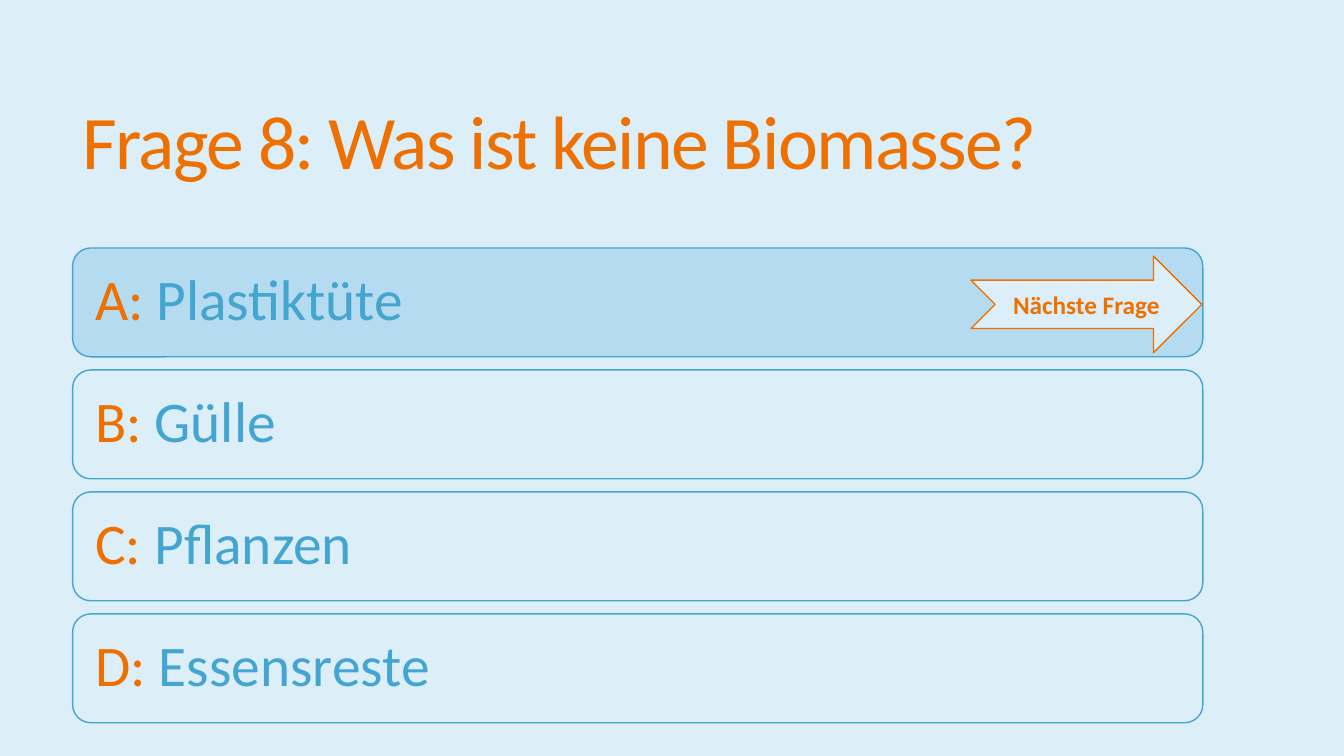
from dataclasses import dataclass

from pptx import Presentation
from pptx import util as u
from pptx.dml.color import RGBColor
from pptx.enum import shapes, text

PX = u.Inches(1) // 100


@dataclass(frozen=True)
class Theme:
    font: str = "Calibri"
    pale: str = "DCEEF8"
    highlight: str = "B5DBF0"
    blue: str = "44A5D0"
    orange: str = "ED7000"
    title_size: int = 54
    answer_size: int = 41
    button_size: int = 18


THEME = Theme()
QUESTION = "Frage 8: Was ist keine Biomasse?"
ANSWERS = [("A: ", "Plastiktüte"), ("B: ", "Gülle"),
           ("C: ", "Pflanzen"), ("D: ", "Essensreste")]
CORRECT = 0


def color(value):
    return RGBColor.from_string(value)


def add_span(para, words, size, fill, bold=False, spacing=None):
    span = para.add_run()
    span.text = words
    span.font.name = THEME.font
    span.font.size = u.Pt(size)
    span.font.bold = bold
    span.font.color.rgb = color(fill)
    if spacing is not None:
        span.font._element.set("spc", str(spacing))


def format_para(frame, align, line_spacing=1.0):
    frame.word_wrap = True
    frame.auto_size = text.MSO_AUTO_SIZE.NONE
    frame.vertical_anchor = text.MSO_ANCHOR.MIDDLE
    para = frame.paragraphs[0]
    para.alignment = align
    para.line_spacing = line_spacing
    return para


def add_panel(page, kind, left, top, width, height, fill, line):
    panel = page.shapes.add_shape(
        kind, *(length * PX for length in (left, top, width, height)))
    panel.shadow.inherit = False
    panel.fill.solid()
    panel.fill.fore_color.rgb = color(fill)
    panel.line.color.rgb = color(line)
    panel.line.width = u.Pt(1)
    return panel


# Question in the title placeholder
def place_question(page, left, top, width, height):
    title = page.shapes.title
    title.left, title.top = left * PX, top * PX
    title.width, title.height = width * PX, height * PX
    para = format_para(title.text_frame, text.PP_ALIGN.LEFT, 0.85)
    add_span(para, QUESTION, THEME.title_size, THEME.orange, spacing=-120)


# Stack of answer panels, the correct one highlighted
def place_answers(page, left, top, width, height, gap):
    panel_height = (height - gap * (len(ANSWERS) - 1)) // len(ANSWERS)
    for index, (letter, answer) in enumerate(ANSWERS):
        fill = THEME.highlight if index == CORRECT else THEME.pale
        panel = add_panel(page, shapes.MSO_SHAPE.ROUNDED_RECTANGLE,
                          left, top + index * (panel_height + gap),
                          width, panel_height, fill, THEME.blue)
        frame = panel.text_frame
        frame.margin_left = frame.margin_right = 17 * PX
        para = format_para(frame, text.PP_ALIGN.LEFT, 0.9)
        add_span(para, letter, THEME.answer_size, THEME.orange)
        add_span(para, answer, THEME.answer_size, THEME.blue)


# Arrow to the next question
def place_next_arrow(page, left, top, width, height):
    arrow = add_panel(page, shapes.MSO_SHAPE.NOTCHED_RIGHT_ARROW,
                      left, top, width, height, THEME.pale, THEME.orange)
    para = format_para(arrow.text_frame, text.PP_ALIGN.CENTER)
    add_span(para, "Nächste Frage", THEME.button_size, THEME.orange, bold=True)


def main():
    deck = Presentation()
    deck.slide_width, deck.slide_height = 1333 * PX, 750 * PX
    page = deck.slides.add_slide(deck.slide_layouts.get_by_name("Title Only"))
    page.background.fill.solid()
    page.background.fill.fore_color.rgb = color(THEME.pale)
    place_question(page, 72, 55, 1245, 181)
    place_answers(page, 72, 246, 1121, 471, gap=13)
    place_next_arrow(page, 963, 254, 229, 96)
    deck.save("out.pptx")


if __name__ == "__main__":
    main()
